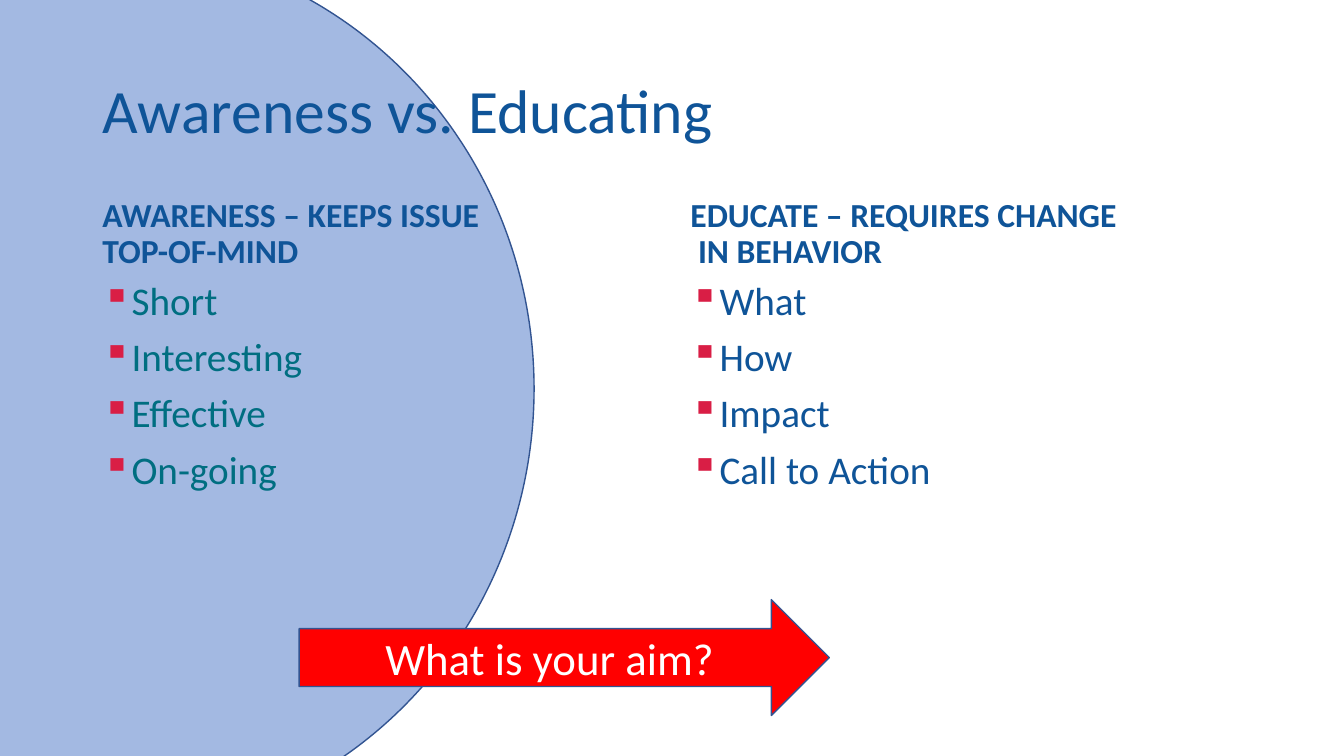
from lxml import etree
from pptx import Presentation
from pptx import util as u
from pptx.dml import color
from pptx.enum import shapes, text
from pptx.oxml import ns


class Deck:
    font = "Calibri"
    hues = {
        "navy": "0F5498",
        "teal": "006E81",
        "mark": "D91E45",
        "disc": "4472C4",
        "edge": "325491",
        "red": "FF0000",
        "white": "FFFFFF",
    }

    def __init__(self):
        self.prs = Presentation()
        self.prs.slide_width = u.Cm(33.87)
        self.prs.slide_height = u.Cm(19.05)
        self.slide = self.prs.slides.add_slide(self.prs.slide_layouts[6])

    def rgb(self, hue):
        return color.RGBColor.from_string(self.hues[hue])

    def bullet(self, par):
        props = par._p.get_or_add_pPr()
        props.set("marL", str(u.Cm(0.64)))
        props.set("indent", str(-u.Cm(0.64)))
        tint = etree.SubElement(props, ns.qn("a:buClr"))
        etree.SubElement(tint, ns.qn("a:srgbClr"), val=self.hues["mark"])
        etree.SubElement(props, ns.qn("a:buChar"), char="▪")

    def style(self, par, size, hue, bold=False):
        par.font.name = self.font
        par.font.size = u.Pt(size)
        par.font.bold = bold
        par.font.color.rgb = self.rgb(hue)

    def label(self, box, lines, size, hue, anchor="TOP", bold=False, marks=False):
        frame = self.slide.shapes.add_textbox(*map(u.Cm, box)).text_frame
        frame.word_wrap = True
        frame.vertical_anchor = text.MSO_ANCHOR[anchor]
        for i, line in enumerate(lines):
            par = frame.add_paragraph() if i else frame.paragraphs[0]
            par.text = line
            par.line_spacing = 0.9
            if i:
                par.space_before = u.Pt(10)
            if marks:
                self.bullet(par)
            self.style(par, size, hue, bold)

    def shape(self, kind, box, fill, alpha=None):
        item = self.slide.shapes.add_shape(shapes.MSO_SHAPE[kind], *map(u.Cm, box))
        item.shadow.inherit = False
        item.fill.solid()
        item.fill.fore_color.rgb = self.rgb(fill)
        item.line.color.rgb = self.rgb("edge")
        item.line.width = u.Pt(1)
        if alpha:
            tint = item._element.spPr.find(ns.qn("a:solidFill"))[0]
            etree.SubElement(tint, ns.qn("a:alpha"), val=str(alpha * 1000))
        return item

    def arrow(self, box, words):
        frame = self.shape("RIGHT_ARROW", box, "red").text_frame
        frame.vertical_anchor = text.MSO_ANCHOR.MIDDLE
        par = frame.paragraphs[0]
        par.text = words
        par.alignment = text.PP_ALIGN.CENTER
        self.style(par, 32, "white")

    def column(self, left, head, items, hue):
        wide = 14.35
        self.label((left, 4.67, wide, 2.29), [head], 24, "navy", "BOTTOM", bold=True)
        self.label((left, 6.96, wide, 10.24), items, 28, hue, marks=True)


def main():
    deck = Deck()
    deck.shape("OVAL", (-8.23, -1.37, 21.69, 22.33), "disc", 49)
    deck.label((2.33, 1.01, 29.21, 3.68), ["Awareness vs. Educating"], 44, "navy", "MIDDLE")
    deck.column(2.33, "AWARENESS – KEEPS ISSUE \vTOP-OF-MIND",
                ["Short", "Interesting", "Effective", "On-going"], "teal")
    deck.column(17.15, "EDUCATE – REQUIRES CHANGE\v IN BEHAVIOR",
                ["What", "How", "Impact", "Call to Action"], "navy")
    deck.arrow((7.54, 15.11, 13.36, 2.92), "What is your aim?")
    deck.prs.save("out.pptx")


if __name__ == "__main__":
    main()
